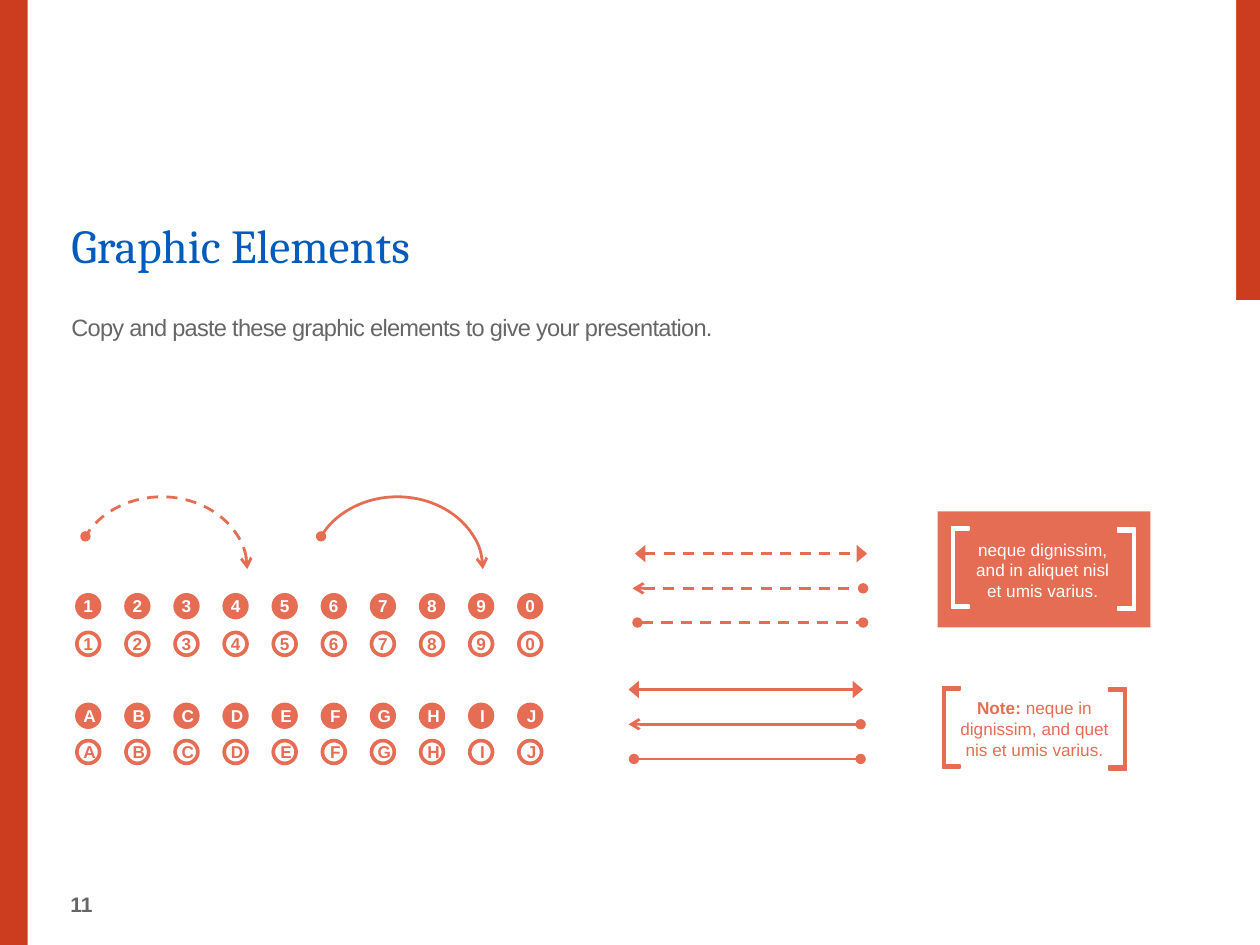
from lxml.etree import SubElement
from pptx import Presentation
from pptx.dml.color import RGBColor
from pptx.enum.dml import MSO_LINE as Dash
from pptx.enum.shapes import MSO_CONNECTOR as Link, MSO_SHAPE as Kind
from pptx.enum.text import MSO_ANCHOR as Anchor, PP_ALIGN as Align
from pptx.oxml.ns import qn
from pptx.util import Cm, Pt

RED = RGBColor(0xCC, 0x3D, 0x1F)
CORAL = RGBColor(0xE5, 0x6D, 0x54)
WHITE = RGBColor(0xFF, 0xFF, 0xFF)
GREY = RGBColor(0x66, 0x66, 0x66)
BLUE = RGBColor(0x00, 0x5B, 0xBB)


def paint(shape, fill, edge=None, width=1):
    """Set fill and outline; None leaves either one out."""
    shape.shadow.inherit = False
    if fill is None:
        shape.fill.background()
    else:
        shape.fill.solid()
        shape.fill.fore_color.rgb = fill
    if edge is None:
        shape.line.fill.background()
    else:
        shape.line.color.rgb = edge
        shape.line.width = Pt(width)


def stroke(item, head, tail, dashed):
    """Draw a coral line with the given end marks and no shadow."""
    item.line.color.rgb = CORAL
    item.line.width = Pt(1.6)
    if dashed:
        item.line.dash_style = Dash.DASH
    props = item._element.spPr
    line = props.find(qn("a:ln"))
    for tag, mark in (("a:headEnd", head), ("a:tailEnd", tail)):
        wide = "lg" if mark == "triangle" else "med"
        SubElement(line, qn(tag), type=mark, w=wide, len="med")
    SubElement(props, qn("a:effectLst"))


deck = Presentation()
deck.slide_width, deck.slide_height = Cm(25.4), Cm(19.05)
slide = deck.slides.add_slide(deck.slide_layouts[6])
slide.background.fill.solid()
slide.background.fill.fore_color.rgb = RED
shapes = slide.shapes

# White page panels and the coral note card
for x, y, w, h, fill in (
    (0.56, 0, 24.36, 19.05, WHITE),
    (11.81, 6.05, 13.59, 13, WHITE),
    (18.9, 10.31, 4.29, 2.34, CORAL),
):
    panel = shapes.add_shape(Kind.RECTANGLE, Cm(x), Cm(y), Cm(w), Cm(h))
    paint(panel, fill)

# Curved arrows
for x, dashed in ((1.8, True), (6.55, False)):
    arc = shapes.add_shape(Kind.ARC, Cm(x), Cm(9.75), Cm(2.92), Cm(3.45))
    arc.adjustments[0], arc.adjustments[1] = 162, 40.02
    arc.rotation = 270
    arc._element.spPr.xfrm.set("flipV", "1")
    arc.fill.background()
    stroke(arc, "arrow", "oval", dashed)

# Rows of numbered and lettered dots
for y, marks, solid in (
    (11.99, "1234567890", True),
    (12.75, "1234567890", False),
    (14.2, "ABCDEFGHIJ", True),
    (14.93, "ABCDEFGHIJ", False),
):
    for col, mark in enumerate(marks):
        dot = shapes.add_shape(
            Kind.OVAL, Cm(1.55 + 0.99 * col), Cm(y), Cm(0.46), Cm(0.46))
        paint(dot, CORAL if solid else None, CORAL, 2 if solid else 2.09)
        frame = dot.text_frame
        frame.word_wrap = False
        frame.vertical_anchor = Anchor.MIDDLE
        frame.margin_top = frame.margin_bottom = frame.margin_right = 0
        frame.margin_left = Cm(0.06 if mark.isalpha() else 0)
        para = frame.paragraphs[0]
        para.alignment = Align.CENTER
        run = para.add_run()
        run.text = mark
        run.font.name, run.font.size, run.font.bold = "Arial", Pt(9.8), True
        run.font.color.rgb = WHITE if solid else CORAL

# Straight arrows
for left, right, y, head, tail, dashed in (
    (12.8, 17.48, 11.16, "triangle", "triangle", True),
    (12.75, 17.4, 11.86, "arrow", "oval", True),
    (12.85, 17.4, 12.55, "oval", "oval", True),
    (12.67, 17.4, 13.9, "triangle", "triangle", False),
    (12.67, 17.35, 14.6, "arrow", "oval", False),
    (12.78, 17.35, 15.3, "oval", "oval", False),
):
    line = shapes.add_connector(Link.STRAIGHT, Cm(left), Cm(y), Cm(right), Cm(y))
    stroke(line, head, tail, dashed)

# Brackets: (arm direction, outer edge, top, colour)
OUTLINE = ((0, 0), (0, 1.65), (0.36, 1.65), (0.36, 1.58),
           (0.06, 1.58), (0.06, 0.07), (0.36, 0.07), (0.36, 0))
for way, edge, top, colour in (
    (1, 19, 13.84, CORAL),
    (-1, 22.71, 13.87, CORAL),
    (1, 19.18, 10.62, WHITE),
    (-1, 22.89, 10.65, WHITE),
):
    points = [(Cm(edge + way * x), Cm(top + y)) for x, y in OUTLINE]
    pen = shapes.build_freeform(*points[0])
    pen.add_line_segments(points[1:], close=True)
    paint(pen.convert_to_shape(), colour, colour)

# Texts: place, anchor, alignment, line spacing, letter spacing,
# font, size, colour, runs as (wording, bold)
for place, anchor, align, lead, track, name, size, colour, runs in (
    ((1.19, 3.66, 8.89, 1.98), Anchor.BOTTOM, Align.LEFT, 0.9, 0,
     "Cambria", 27, BLUE, [("Graphic Elements", False)]),
    ((1.19, 6.07, 15.16, 2.59), Anchor.TOP, Align.LEFT, Pt(19.5), -40,
     "Arial", 13.5, GREY,
     [("Copy and paste these graphic elements to give your presentation.",
       False)]),
    ((19.38, 10.74, 3.28, 1.5), Anchor.TOP, Align.CENTER, 1, 0,
     "Arial", 9.8, WHITE,
     [("neque dignissim, and in aliquet nisl et umis varius.", False)]),
    ((19, 13.94, 3.71, 1.5), Anchor.TOP, Align.CENTER, 1, 0,
     "Arial", 9.8, CORAL,
     [("Note: ", True),
      ("neque in dignissim, and quet nis et umis varius.", False)]),
    ((1.17, 17.81, 1.68, 0.84), Anchor.MIDDLE, Align.LEFT, 1, 0,
     "Arial", 12, GREY, [("11", True)]),
):
    frame = shapes.add_textbox(*map(Cm, place)).text_frame
    frame.word_wrap = True
    frame.vertical_anchor = anchor
    para = frame.paragraphs[0]
    para.alignment, para.line_spacing = align, lead
    for text, bold in runs:
        run = para.add_run()
        run.text = text
        run.font.name, run.font.size, run.font.bold = name, Pt(size), bold
        run.font.color.rgb = colour
        if track:
            run._r.get_or_add_rPr().set("spc", str(track))

deck.save("out.pptx")
